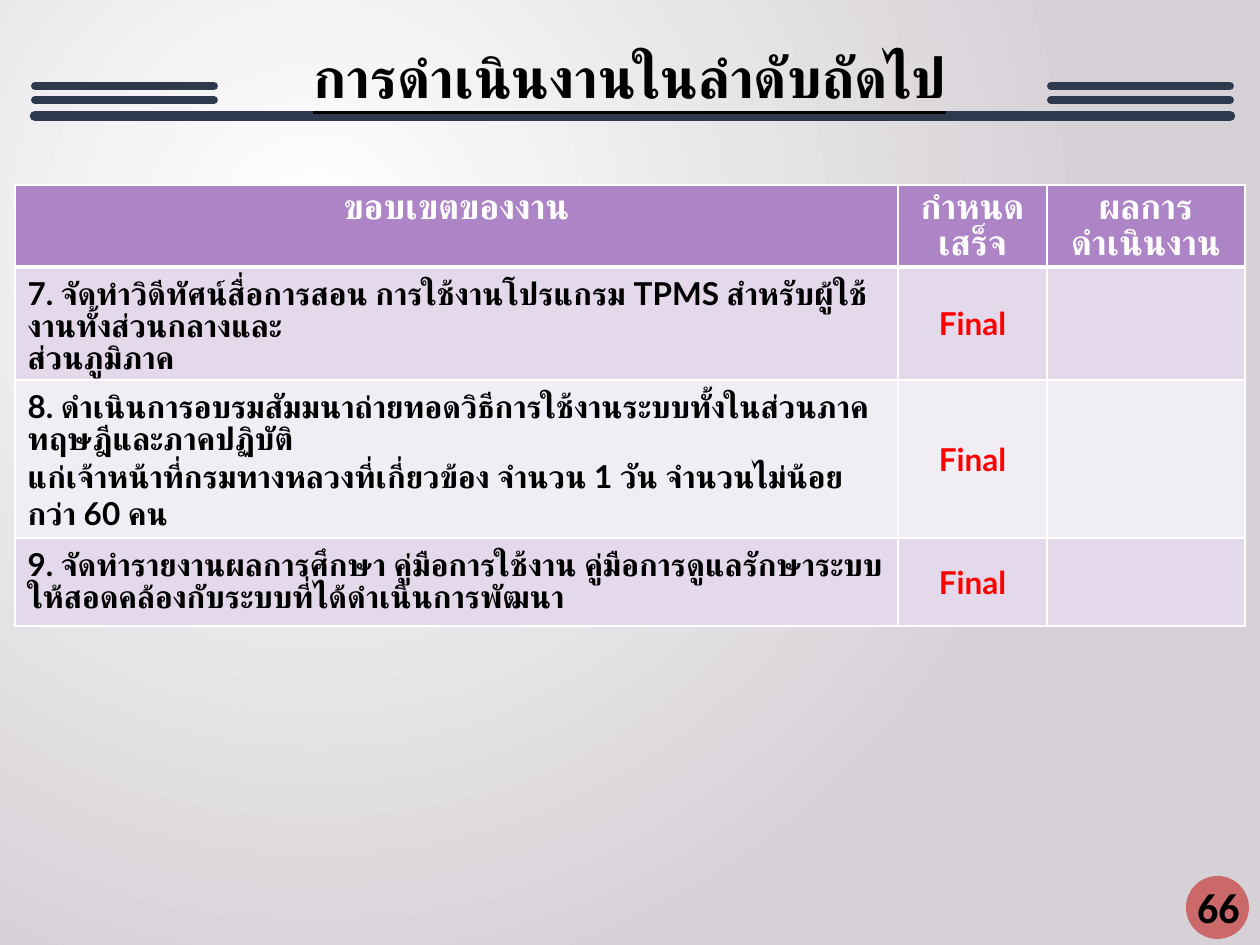
from dataclasses import dataclass
from lxml.etree import SubElement
from pptx import Presentation
from pptx.dml.color import RGBColor
from pptx.enum.shapes import MSO_CONNECTOR, MSO_SHAPE
from pptx.enum.text import MSO_ANCHOR, PP_ALIGN
from pptx.oxml.ns import qn
from pptx.util import Emu, Pt


@dataclass
class Theme:
    white: str = "FFFFFF"
    grey: str = "D6D1D6"
    navy: str = "2E394D"
    black: str = "000000"
    red: str = "FF0000"
    wine: str = "C00000"
    head: str = "AD84C6"
    bands: tuple = ("E3D9EA", "F1EDF5")
    font: str = "Lato"
    plain: str = "Calibri"
    title: int = 32
    page: int = 24
    label: int = 20
    body: int = 18


def px(*sizes):
    return [Emu(round(n * 914400 / 126)) for n in sizes]


def write(frame, text, size, color, font, align=PP_ALIGN.CENTER, lines=(), under=None):
    frame.text = text
    frame.word_wrap = True
    for para in frame.paragraphs:
        para.alignment = align
        for run in para.runs:
            run.font.size = Pt(size)
            run.font.bold = True
            run.font.underline = under
            run.font.color.rgb = RGBColor.from_string(color)
            run.font.name = font
            SubElement(run.font._element, qn("a:cs"), typeface=font)
    for para, line in zip(frame.paragraphs, lines):
        para.line_spacing = Pt(line)


theme = Theme()
deck = Presentation()
deck.slide_width, deck.slide_height = px(1260, 945)
slide = deck.slides.add_slide(deck.slide_layouts[5])
shapes = slide.shapes

fill = slide.background.fill
fill.gradient()
for stop, color, spot in zip(fill.gradient_stops, (theme.white, theme.grey), (0, 1)):
    stop.color.rgb = RGBColor.from_string(color)
    stop.position = spot
grad = slide.element.find(".//" + qn("a:gradFill"))
grad.remove(grad.find(qn("a:lin")))
shade = SubElement(grad, qn("a:path"), path="circle")
SubElement(shade, qn("a:fillToRect"), l="50000", t="50000", r="100000", b="100000")

disc = shapes.add_shape(MSO_SHAPE.OVAL, *px(1186, 876, 63, 63))
disc.shadow.inherit = False
disc.fill.solid()
disc.fill.fore_color.rgb = RGBColor.from_string(theme.wine)
disc.line.fill.background()
tint = disc._element.spPr.find(".//" + qn("a:srgbClr"))
SubElement(tint, qn("a:alpha"), val="50000")

left, right = 35, 1230
rules = [(left, right, 116, 6)]
for y in (100, 86):
    rules += [(1051, right, y, 4.5), (left, 214, y, 4.5)]
for start, end, y, width in rules:
    rule = shapes.add_connector(MSO_CONNECTOR.STRAIGHT, *px(start, y, end, y))
    rule.line.width = Pt(width)
    rule.line.color.rgb = RGBColor.from_string(theme.navy)
    rule.line._ln.set("cap", "rnd")
    SubElement(rule._element.spPr, qn("a:effectLst"))

page = shapes.add_textbox(*px(1182, 880, 73, 53)).text_frame
page.vertical_anchor = MSO_ANCHOR.MIDDLE
write(page, "66", theme.page, theme.black, theme.plain)

rows = [
    ("ขอบเขตของงาน", "กำหนดเสร็จ", "ผลการดำเนินงาน"),
    ("7. จัดทำวิดีทัศน์สื่อการสอน การใช้งานโปรแกรม TPMS สำหรับผู้ใช้งานทั้งส่วนกลางและ\n"
     "ส่วนภูมิภาค", "Final", ""),
    ("8. ดำเนินการอบรมสัมมนาถ่ายทอดวิธีการใช้งานระบบทั้งในส่วนภาคทฤษฎีและภาคปฏิบัติ\n"
     "แก่เจ้าหน้าที่กรมทางหลวงที่เกี่ยวข้อง จำนวน 1 วัน จำนวนไม่น้อยกว่า 60 คน", "Final", ""),
    ("9. จัดทำรายงานผลการศึกษา คู่มือการใช้งาน คู่มือการดูแลรักษาระบบ "
     "ให้สอดคล้องกับระบบที่ได้ดำเนินการพัฒนา", "Final", ""),
]
wide = (883, 149, 198)
high = (82, 113, 158, 88)
pitch = ((20.2,), (18.3, 18.3), (18.3, 21.6), (18.3,))
table = shapes.add_table(len(rows), len(wide), *px(15, 185, sum(wide), sum(high))).table
for col, size in zip(table.columns, px(*wide)):
    col.width = size
for row, size in zip(table.rows, px(*high)):
    row.height = size
for r, row in enumerate(rows):
    for c, text in enumerate(row):
        cell = table.cell(r, c)
        thick = {0: "B", 1: "T"}.get(r)
        for side in "LRTB":
            width = Pt(3 if side == thick else 1)
            edge = SubElement(cell._tc.get_or_add_tcPr(), qn("a:ln" + side), w=str(width))
            paint = SubElement(edge, qn("a:solidFill"))
            SubElement(paint, qn("a:srgbClr"), val=theme.white)
        cell.fill.solid()
        shade = theme.bands[(r - 1) % 2] if r else theme.head
        cell.fill.fore_color.rgb = RGBColor.from_string(shade)
        if r and c:
            cell.vertical_anchor = MSO_ANCHOR.MIDDLE
        else:
            cell.margin_top, cell.margin_bottom = px(13 if r else 7, 2)
        size = theme.body if r else theme.label
        color = (theme.red if c else theme.black) if r else theme.white
        align = PP_ALIGN.LEFT if r and not c else PP_ALIGN.CENTER
        lines = () if r and c else pitch[r]
        write(cell.text_frame, text, size, color, theme.font, align=align, lines=lines)

title = shapes.title
title.left, title.top, title.width, title.height = px(0, 26, 1260, 90)
title.text_frame.vertical_anchor = MSO_ANCHOR.BOTTOM
write(title.text_frame, "การดำเนินงานในลำดับถัดไป", theme.title, theme.black,
      theme.font, lines=(58,), under=True)
title._element.getparent().append(title._element)

deck.save("out.pptx")
